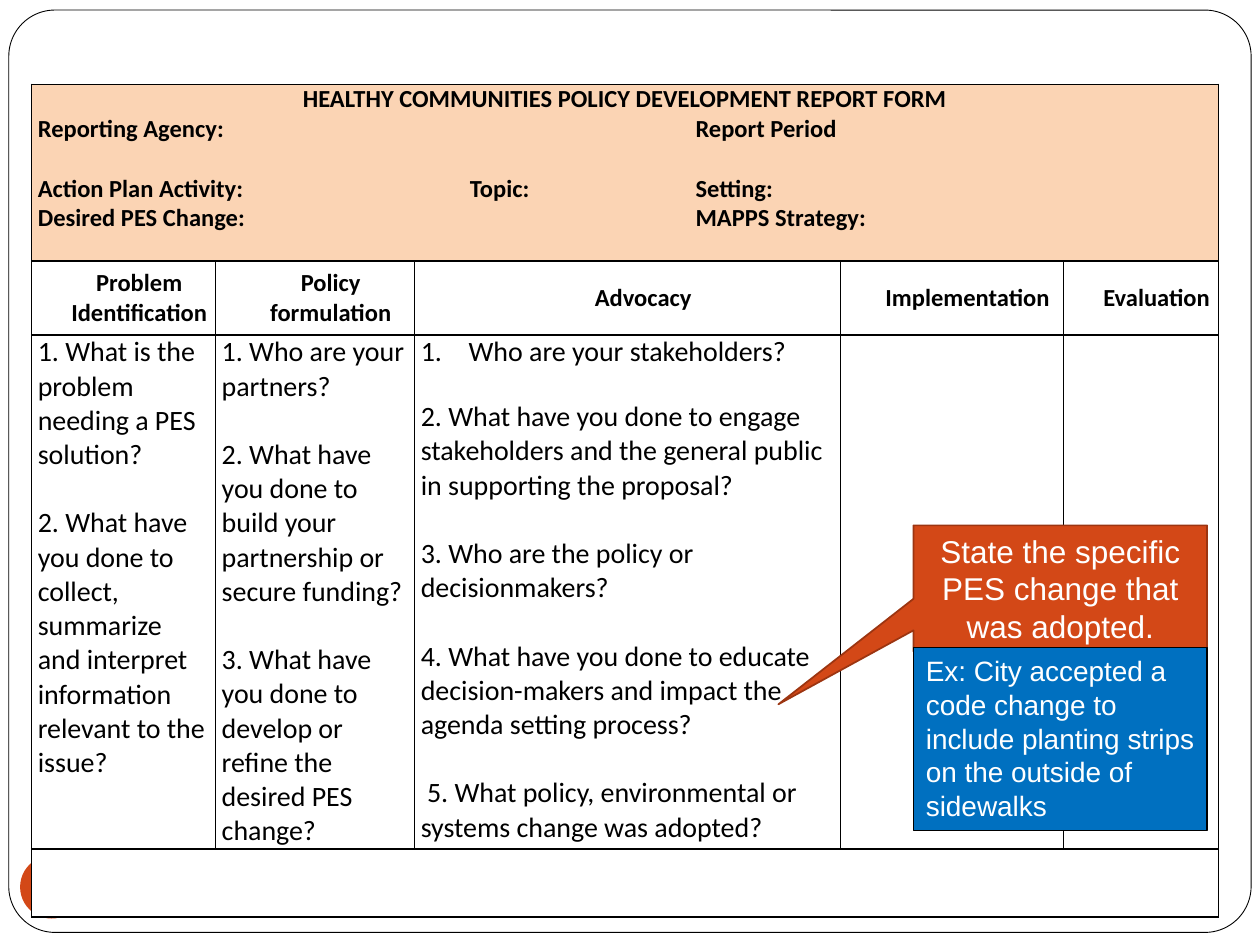
from lxml import etree
from pptx import Presentation
from pptx.dml.color import RGBColor
from pptx.enum.shapes import MSO_SHAPE
from pptx.enum.text import MSO_ANCHOR, PP_ALIGN
from pptx.oxml.ns import qn
from pptx.util import Inches, Pt

CENTER, LEFT = PP_ALIGN.CENTER, PP_ALIGN.LEFT
MIDDLE, TOP = MSO_ANCHOR.MIDDLE, MSO_ANCHOR.TOP
COLORS = {"white": "FFFFFF", "black": "000000", "peach": "FBD4B4",
          "orange": "D34817", "rust": "9C3511", "blue": "0070C0"}


def color(name):
    return RGBColor.from_string(COLORS[name])


def write(par, text, size, font="Calibri", ink="black", bold=False, align=LEFT):
    par.alignment = align
    run = par.add_run()
    run.text = text
    run.font.size = Pt(size)
    run.font.name = font
    run.font.bold = bold
    run.font.color.rgb = color(ink)


prs = Presentation()
prs.slide_width, prs.slide_height = Inches(10), Inches(7.5)
slide = prs.slides.add_slide(prs.slide_layouts[6])
shapes = slide.shapes

# Frame and page dot
frame = shapes.add_shape(MSO_SHAPE.ROUNDED_RECTANGLE, Inches(0.07), Inches(0.08),
                         Inches(9.86), Inches(7.32))
frame.adjustments[0] = 0.05
frame.fill.solid()
frame.fill.fore_color.rgb = color("white")
frame.line.color.rgb = color("black")
frame.line.width = Pt(0.5)
frame.shadow.inherit = False

dot = shapes.add_shape(MSO_SHAPE.OVAL, Inches(0.16), Inches(6.79), Inches(0.5), Inches(0.5))
dot.fill.solid()
dot.fill.fore_color.rgb = color("orange")
dot.line.fill.background()
dot.shadow.inherit = False

# Report form
widths = [1.46, 1.58, 3.38, 1.77, 1.23]
heights = [1.4, 0.59, 4.08, 0.54]
table = shapes.add_table(4, 5, Inches(0.25), Inches(0.67),
                         Inches(sum(widths)), Inches(sum(heights))).table
for col, width in zip(table.columns, widths):
    col.width = Inches(width)
for row, height in zip(table.rows, heights):
    row.height = Inches(height)
for r in (0, 3):
    table.cell(r, 0).merge(table.cell(r, 4))

for r in range(4):
    for c in range(5):
        cell = table.cell(r, c)
        cell.margin_left = cell.margin_right = Inches(0.05)
        cell.margin_top = cell.margin_bottom = 0
        cell.vertical_anchor = MIDDLE if r == 1 else TOP
        cell.fill.solid()
        cell.fill.fore_color.rgb = color("white" if r else "peach")
        props = cell._tc.get_or_add_tcPr()
        for i, side in enumerate(("lnL", "lnR", "lnT", "lnB")):
            edge = etree.Element(qn("a:" + side), w=str(Pt(1)))
            fill = etree.SubElement(edge, qn("a:solidFill"))
            etree.SubElement(fill, qn("a:srgbClr"), val=COLORS["black"])
            props.insert(i, edge)

# Form heading: labels sit on tab stops
frame = table.cell(0, 0).text_frame
write(frame.paragraphs[0], "HEALTHY COMMUNITIES POLICY DEVELOPMENT REPORT FORM", 14,
      bold=True, align=CENTER)
lines = [
    ("Reporting Agency:\tReport Period", [5.22], 0),
    ("Action Plan Activity:\tTopic:\tSetting:", [3.43, 5.22], 17),
    ("Desired PES Change:\tMAPPS Strategy:", [5.22], 0),
]
for text, stops, gap in lines:
    par = frame.add_paragraph()
    write(par, text, 14, bold=True)
    par.space_before = Pt(gap)
    tabs = etree.SubElement(par._p.get_or_add_pPr(), qn("a:tabLst"))
    for stop in stops:
        etree.SubElement(tabs, qn("a:tab"), pos=str(Inches(stop)), algn="l")

heads = ["Problem Identification", "Policy formulation", "Advocacy",
         "Implementation", "Evaluation"]
for c, head in enumerate(heads):
    par = table.cell(1, c).text_frame.paragraphs[0]
    write(par, head, 14, bold=True, align=CENTER)
    par._p.get_or_add_pPr().set("marL", str(Inches(0.25)))

asks = [
    ["1. What is the problem needing a PES solution?",
     "2. What have you done to collect, summarize and interpret information "
     "relevant to the issue?"],
    ["1. Who are your partners?",
     "2. What have you done to build your partnership or secure funding?",
     "3. What have you done to develop or refine the desired PES change?"],
    ["Who are your stakeholders?",
     "2. What have you done to engage stakeholders and the general public in "
     "supporting the proposal?",
     "3. Who are the policy or decisionmakers?",
     "4. What have you done to educate decision-makers and impact the agenda "
     "setting process?",
     " 5. What policy, environmental or systems change was adopted?"],
]
for c, texts in enumerate(asks):
    frame = table.cell(2, c).text_frame
    for i, text in enumerate(texts):
        par = frame.add_paragraph() if i else frame.paragraphs[0]
        write(par, text, 16)
        if i:
            par.space_before = Pt(17.5 if c == 2 and i == 1 else 19.5)

# The first advocacy question is a numbered item
props = table.cell(2, 2).text_frame.paragraphs[0]._p.get_or_add_pPr()
props.set("marL", str(Inches(0.38)))
props.set("indent", str(Inches(-0.38)))
etree.SubElement(props, qn("a:buFont"), typeface="+mj-lt")
etree.SubElement(props, qn("a:buAutoNum"), type="arabicPeriod")

# Callout and example
notes = [
    (MSO_SHAPE.RECTANGULAR_CALLOUT, 4.17, 1, "orange", "rust", 1, MIDDLE, CENTER, 18,
     "State the specific PES change that was adopted."),
    (MSO_SHAPE.RECTANGLE, 5.14, 1.45, "blue", "black", 0.75, TOP, LEFT, 16,
     "Ex: City accepted a code change to include planting strips on the outside "
     "of sidewalks"),
]
for kind, top, height, fill, edge, weight, anchor, align, size, text in notes:
    note = shapes.add_shape(kind, Inches(7.25), Inches(top), Inches(2.33), Inches(height))
    if kind == MSO_SHAPE.RECTANGULAR_CALLOUT:
        note.adjustments[0], note.adjustments[1] = -0.96, 0.92
    note.fill.solid()
    note.fill.fore_color.rgb = color(fill)
    note.line.color.rgb = color(edge)
    note.line.width = Pt(weight)
    note.shadow.inherit = False
    note.text_frame.word_wrap = True
    note.text_frame.vertical_anchor = anchor
    write(note.text_frame.paragraphs[0], text, size, "Arial", "white", align=align)

prs.save("out.pptx")
